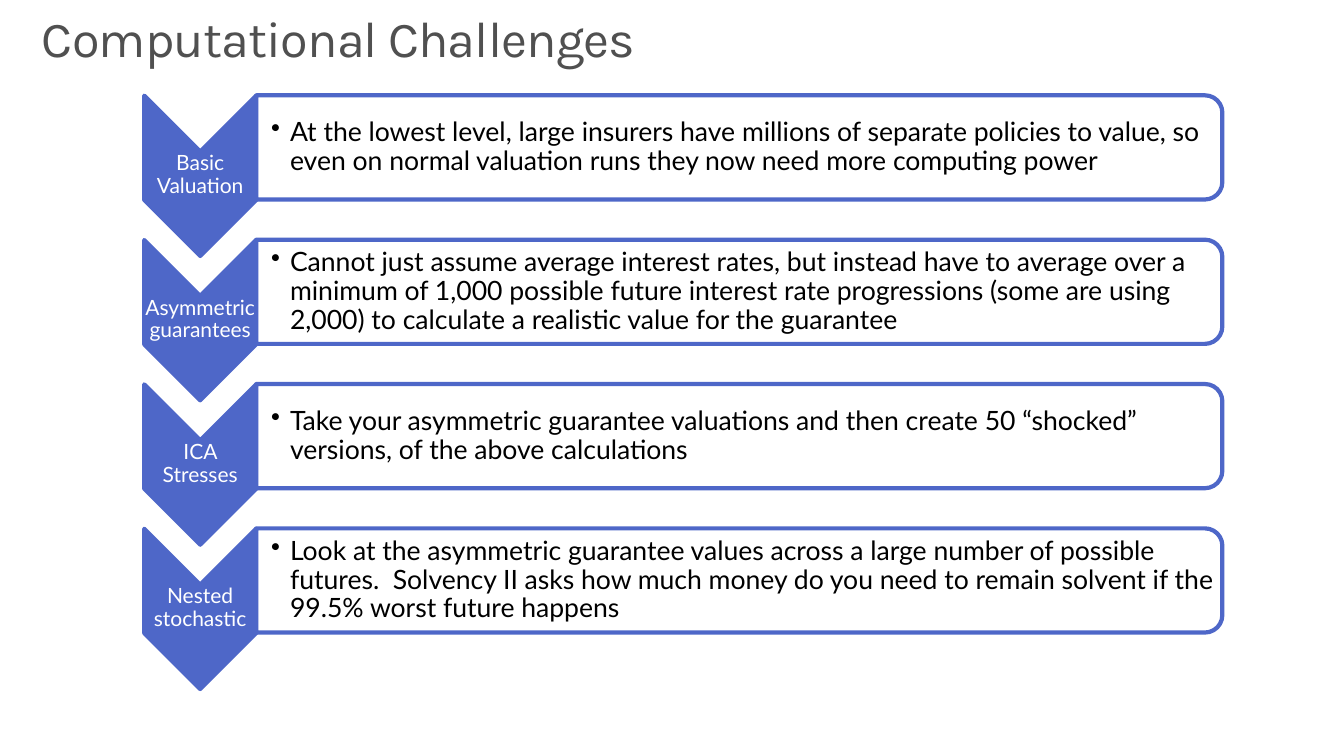
from lxml import etree
from pptx import Presentation
from pptx.dml.color import RGBColor
from pptx.enum.shapes import MSO_SHAPE
from pptx.enum.text import MSO_ANCHOR, PP_ALIGN
from pptx.oxml.ns import qn
from pptx.util import Pt

CHEVRON = MSO_SHAPE.CHEVRON
ROUND_TOP = MSO_SHAPE.ROUND_2_SAME_RECTANGLE
MIDDLE = MSO_ANCHOR.MIDDLE
LEFT, CENTER = PP_ALIGN.LEFT, PP_ALIGN.CENTER

BLUE = RGBColor(0x4E, 0x67, 0xC8)
WHITE = RGBColor(0xFF, 0xFF, 0xFF)
BLACK = RGBColor(0, 0, 0)
GREY = RGBColor(0x50, 0x50, 0x50)

TITLE = {"name": "Karla", "size": Pt(36), "bold": False}
LABEL = {"name": "Lato", "size": Pt(15)}
BODY = {"name": "Lato", "size": Pt(19)}

STEP = 103.1
CHALLENGES = [
    ("Basic Valuation",
     "At the lowest level, large insurers have millions of separate policies to value, "
     "so even on normal valuation runs they now need more computing power"),
    ("Asymmetric guarantees",
     "Cannot just assume average interest rates, but instead have to average over a "
     "minimum of 1,000 possible future interest rate progressions (some are using 2,000) "
     "to calculate a realistic value for the guarantee"),
    ("ICA Stresses",
     "Take your asymmetric guarantee valuations and then create 50 “shocked” versions, "
     "of the above calculations"),
    ("Nested stochastic",
     "Look at the asymmetric guarantee values across a large number of possible futures.  "
     "Solvency II asks how much money do you need to remain solvent if the 99.5% worst "
     "future happens"),
]


def write(sp, text, insets, fmt, color, align):
    tf = sp.text_frame
    tf.word_wrap = True
    tf.vertical_anchor = MIDDLE
    for side, inset in zip(("left", "top", "right", "bottom"), insets):
        setattr(tf, f"margin_{side}", Pt(inset))
    p = tf.paragraphs[0]
    p.alignment = align
    p.line_spacing = 0.9
    r = p.add_run()
    r.text = text
    for key, value in fmt.items():
        setattr(r.font, key, value)
    r.font.color.rgb = color
    return p


def add_turned(kind, cx, cy, width, height, fill):
    sp = s.shapes.add_shape(kind, Pt(cx - width / 2), Pt(cy - height / 2),
                            Pt(width), Pt(height))
    sp.rotation = 90
    sp.shadow.inherit = False
    sp.fill.solid()
    sp.fill.fore_color.rgb = fill
    sp.line.color.rgb = BLUE
    sp.line.width = Pt(3)
    return sp


prs = Presentation()
prs.slide_width, prs.slide_height = Pt(960), Pt(540)
s = prs.slides.add_slide(prs.slide_layouts[5])

title = s.shapes.title
title.left, title.top, title.width, title.height = Pt(0), Pt(0), Pt(906), Pt(51)
p = write(title, "Computational Challenges", (30, 12, 4.5, 4.5), TITLE, GREY, LEFT)
p.runs[0].font._element.set("spc", "-60")

for i, (label, body) in enumerate(CHALLENGES):
    dy = i * STEP
    add_turned(CHEVRON, 143, 125.6 + dy, 114.5, 80, BLUE)
    sp = s.shapes.add_textbox(Pt(103), Pt(108.2 + dy), Pt(80), Pt(34.4))
    write(sp, label, (0.7, 0.7, 0.7, 0.7), LABEL, WHITE, CENTER)

    panel = add_turned(ROUND_TOP, 528.1, 105.3 + dy, 74.4, 690, WHITE)
    color = panel.fill._xPr.find(qn("a:solidFill"))[0]
    etree.SubElement(color, qn("a:alpha"), val="90000")
    sp = s.shapes.add_textbox(Pt(183), Pt(71.8 + dy), Pt(686.3), Pt(67))
    p = write(sp, body, (10.7, 0.7, 0.7, 0.7), BODY, BLACK, LEFT)
    pPr = p._p.get_or_add_pPr()
    pPr.set("marL", str(Pt(13.5)))
    pPr.set("indent", str(-Pt(13.5)))
    etree.SubElement(pPr, qn("a:buChar"), char="•")

prs.save("out.pptx")
